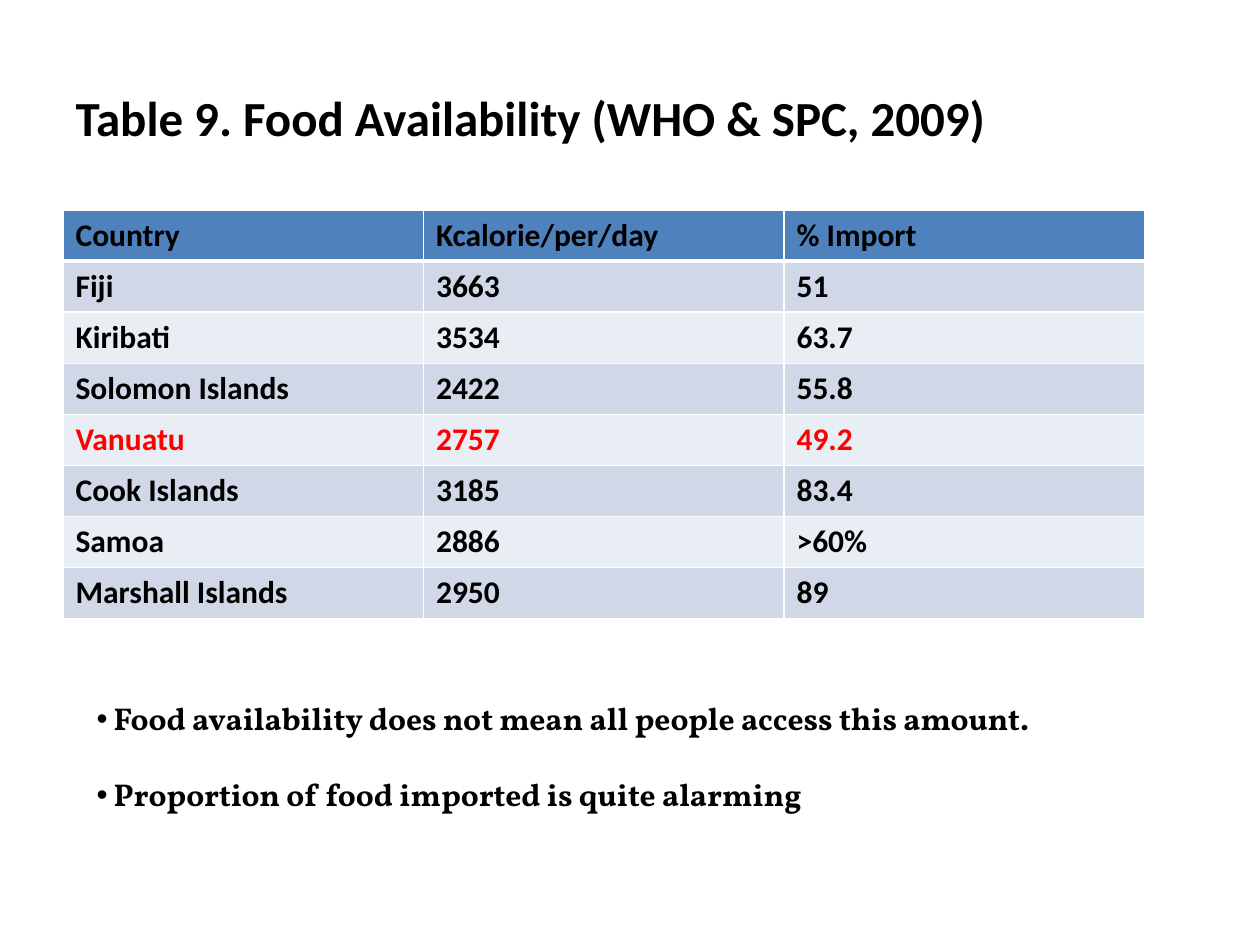
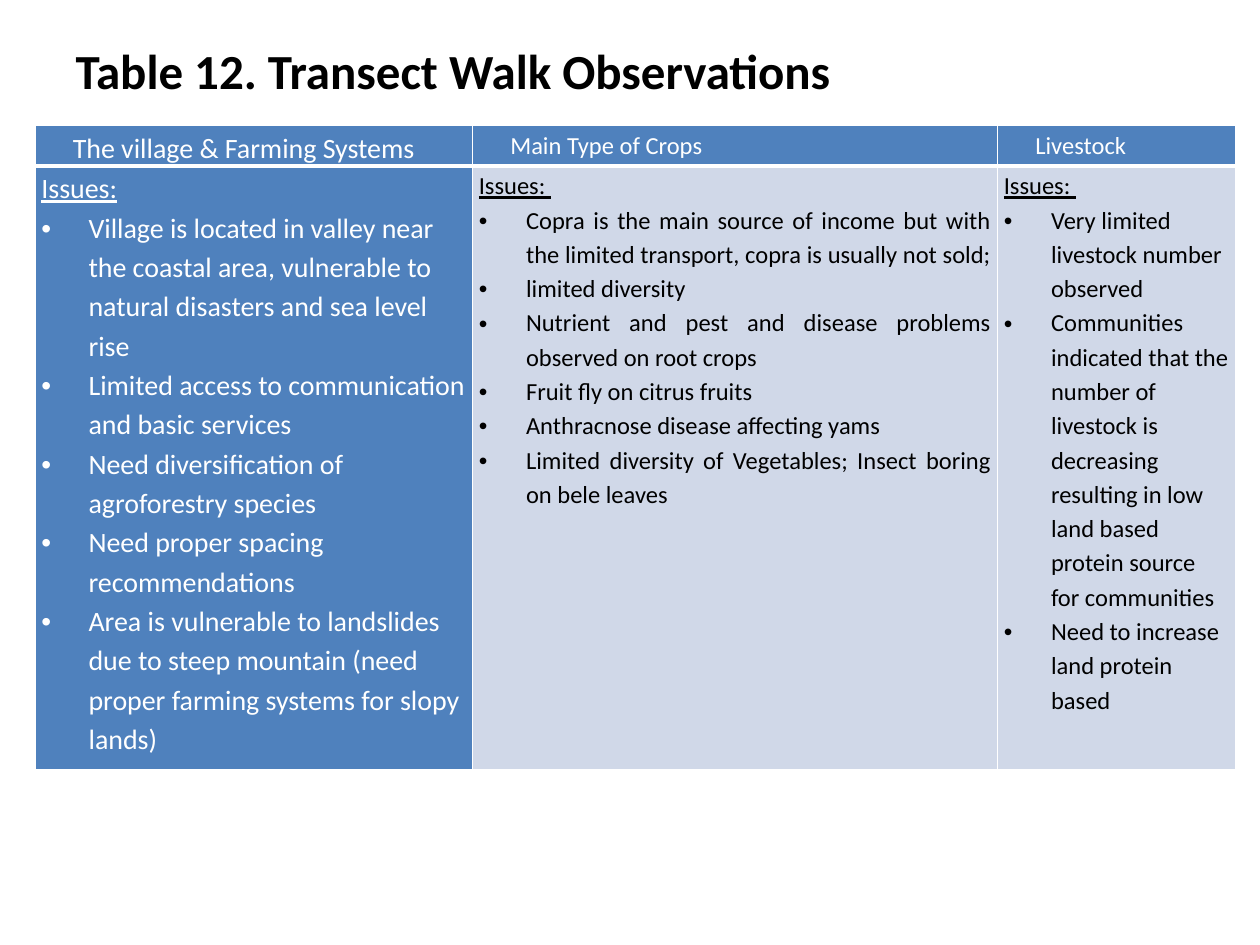
from dataclasses import dataclass

from lxml.etree import SubElement
from pptx import Presentation
from pptx.dml.color import RGBColor
from pptx.enum.text import MSO_ANCHOR as Anchor, MSO_AUTO_SIZE as AutoSize, PP_ALIGN as Align
from pptx.oxml.ns import qn
from pptx.util import Pt

BLACK, WHITE, RED = "000000", "FFFFFF", "FF0000"
HEADER_BLUE, BAND_DARK, BAND_LIGHT = "4F81BD", "D0D8E8", "E9EDF4"
BODY_FONT, NOTE_FONT = "Calibri", "Vollkorn"
TITLE_ONLY = 5


@dataclass(frozen=True)
class Style:
    size: float
    color: str = BLACK
    bold: bool = False
    underline: bool = False
    font: str = BODY_FONT


@dataclass(frozen=True)
class Layout:
    align: Align = Align.LEFT
    line_spacing: float = 1.0
    indent: float = 0
    bullet: bool = False
    space_before: float = 0


@dataclass(frozen=True)
class Box:
    left: float
    top: float
    width: float
    height: float


@dataclass(frozen=True)
class Margins:
    side: float
    top: float
    bottom: float


@dataclass(frozen=True)
class Topic:
    heading: str
    issues_label: str
    issues: tuple[str, ...]
    width: float
    size: float
    color: str
    fill: str
    align: Align = Align.LEFT


FOOD_ROWS = (
    ("Country", "Kcalorie/per/day", "% Import"),
    ("Fiji", "3663", "51"),
    ("Kiribati", "3534", "63.7"),
    ("Solomon Islands", "2422", "55.8"),
    ("Vanuatu", "2757", "49.2"),
    ("Cook Islands", "3185", "83.4"),
    ("Samoa", "2886", ">60%"),
    ("Marshall Islands", "2950", "89"),
)
HIGHLIGHTED_COUNTRY = "Vanuatu"
FOOD_NOTES = (
    "Food availability does not mean all people access this amount.",
    "Proportion of food imported is quite alarming",
)
TOPICS = (
    Topic("The village & Farming Systems", "Issues:", (
        "Village is located in valley near the coastal area, vulnerable to "
        "natural disasters and sea level rise",
        "Limited access to communication and basic services",
        "Need diversification of agroforestry species",
        "Need proper spacing recommendations",
        "Area is vulnerable to landslides due to steep mountain (need proper "
        "farming systems for slopy lands)",
    ), 250, 16, WHITE, HEADER_BLUE),
    Topic("Main Type of Crops", "Issues: ", (
        "Copra is the main source of income but with the limited transport, "
        "copra is usually not sold; ",
        "limited diversity",
        "Nutrient and pest and disease problems observed on root crops",
        "Fruit fly on citrus fruits",
        "Anthracnose disease affecting yams ",
        "Limited diversity of Vegetables; Insect boring on bele leaves",
    ), 300, 14, BLACK, BAND_DARK, Align.JUSTIFY),
    Topic("Livestock", "Issues: ", (
        "Very limited livestock number observed",
        "Communities indicated that the number of livestock is decreasing "
        "resulting in low land based protein source for communities",
        "Need to increase land protein based",
    ), 136, 14, BLACK, BAND_DARK),
)


def rgb(color: str) -> RGBColor:
    return RGBColor.from_string(color)


def add_paragraph(frame, text: str, style: Style, layout: Layout = Layout()) -> None:
    unused = len(frame.paragraphs) == 1 and not frame.paragraphs[0].runs
    paragraph = frame.paragraphs[0] if unused else frame.add_paragraph()
    paragraph.alignment = layout.align
    paragraph.line_spacing = layout.line_spacing
    paragraph.space_before = Pt(layout.space_before)
    properties = paragraph._p.get_or_add_pPr()
    properties.set("marL", str(Pt(layout.indent)))
    properties.set("indent", str(-Pt(layout.indent) if layout.bullet else 0))
    if layout.bullet:
        SubElement(properties, qn("a:buFont")).set("typeface", "Arial")
        SubElement(properties, qn("a:buChar")).set("char", "•")
    run = paragraph.add_run()
    run.text = text
    font = run.font
    font.name, font.size = style.font, Pt(style.size)
    font.bold, font.underline = style.bold, style.underline
    font.color.rgb = rgb(style.color)


def add_titled_slide(presentation, text: str, box: Box):
    slide = presentation.slides.add_slide(presentation.slide_layouts[TITLE_ONLY])
    title = slide.shapes.title
    title.left, title.top = Pt(box.left), Pt(box.top)
    title.width, title.height = Pt(box.width), Pt(box.height)
    frame = title.text_frame
    frame.vertical_anchor, frame.auto_size = Anchor.MIDDLE, AutoSize.NONE
    add_paragraph(frame, text, Style(28, bold=True))
    return slide


def add_plain_table(slide, left: float, top: float, widths: list[float], heights: list[float]):
    table = slide.shapes.add_table(len(heights), len(widths), Pt(left), Pt(top),
                                   Pt(sum(widths)), Pt(sum(heights))).table
    table.first_row = table.horz_banding = False
    for column, width in zip(table.columns, widths):
        column.width = Pt(width)
    for row, height in zip(table.rows, heights):
        row.height = Pt(height)
    return table


def format_cell(table, row: int, column: int, fill: str, margins: Margins):
    cell = table.cell(row, column)
    cell.margin_left = cell.margin_right = Pt(margins.side)
    cell.margin_top, cell.margin_bottom = Pt(margins.top), Pt(margins.bottom)
    properties = cell._tc.get_or_add_tcPr()
    borders = {"L": 1, "R": 1, "T": 3 if row == 1 else 1, "B": 3 if row == 0 else 1}
    for side, width in borders.items():
        line = SubElement(properties, qn(f"a:ln{side}"), w=str(Pt(width)))
        solid = SubElement(line, qn("a:solidFill"))
        SubElement(solid, qn("a:srgbClr"), val=WHITE)
    cell.fill.solid()
    cell.fill.fore_color.rgb = rgb(fill)
    return cell.text_frame


def build_food_slide(presentation) -> None:
    slide = add_titled_slide(presentation, "Table 9. Food Availability (WHO & SPC, 2009)",
                             Box(36, 21.6, 648, 90))
    table = add_plain_table(slide, 36, 120, [206] * 3, [29.2] * len(FOOD_ROWS))
    for row, values in enumerate(FOOD_ROWS):
        fill = HEADER_BLUE if row == 0 else BAND_DARK if row % 2 else BAND_LIGHT
        color = RED if values[0] == HIGHLIGHTED_COUNTRY else BLACK
        for column, value in enumerate(values):
            frame = format_cell(table, row, column, fill, Margins(7.2, 3.6, 3.6))
            add_paragraph(frame, value, Style(18, color, bold=True))
    notes = slide.shapes.add_textbox(Pt(48.2), Pt(396), Pt(554), Pt(72.7)).text_frame
    notes.word_wrap = True
    for index, note in enumerate(FOOD_NOTES):
        add_paragraph(notes, note, Style(18, bold=True, font=NOTE_FONT),
                      Layout(indent=9.7, bullet=True, space_before=22 if index else 0))


def build_transect_slide(presentation) -> None:
    slide = add_titled_slide(presentation, "Table 12. Transect Walk Observations",
                             Box(36, 15, 648, 50))
    table = add_plain_table(slide, 20, 71.6, [topic.width for topic in TOPICS], [22.3, 345])
    margins = Margins(3.6, 0.7, 0)
    for column, topic in enumerate(TOPICS):
        header = format_cell(table, 0, column, HEADER_BLUE, margins)
        add_paragraph(header, topic.heading, Style(topic.size, WHITE),
                      Layout(line_spacing=1.15, indent=18))
        body = format_cell(table, 1, column, topic.fill, margins)
        add_paragraph(body, topic.issues_label, Style(topic.size, topic.color, underline=True),
                      Layout(topic.align, 1.15))
        for issue in topic.issues:
            add_paragraph(body, issue, Style(topic.size, topic.color),
                          Layout(topic.align, 1.15, 27, bullet=True))


def main() -> None:
    """Build the food availability and transect walk slides."""
    presentation = Presentation()
    presentation.slide_width, presentation.slide_height = Pt(720), Pt(540)
    build_food_slide(presentation)
    build_transect_slide(presentation)
    presentation.save("out.pptx")


if __name__ == "__main__":
    main()
